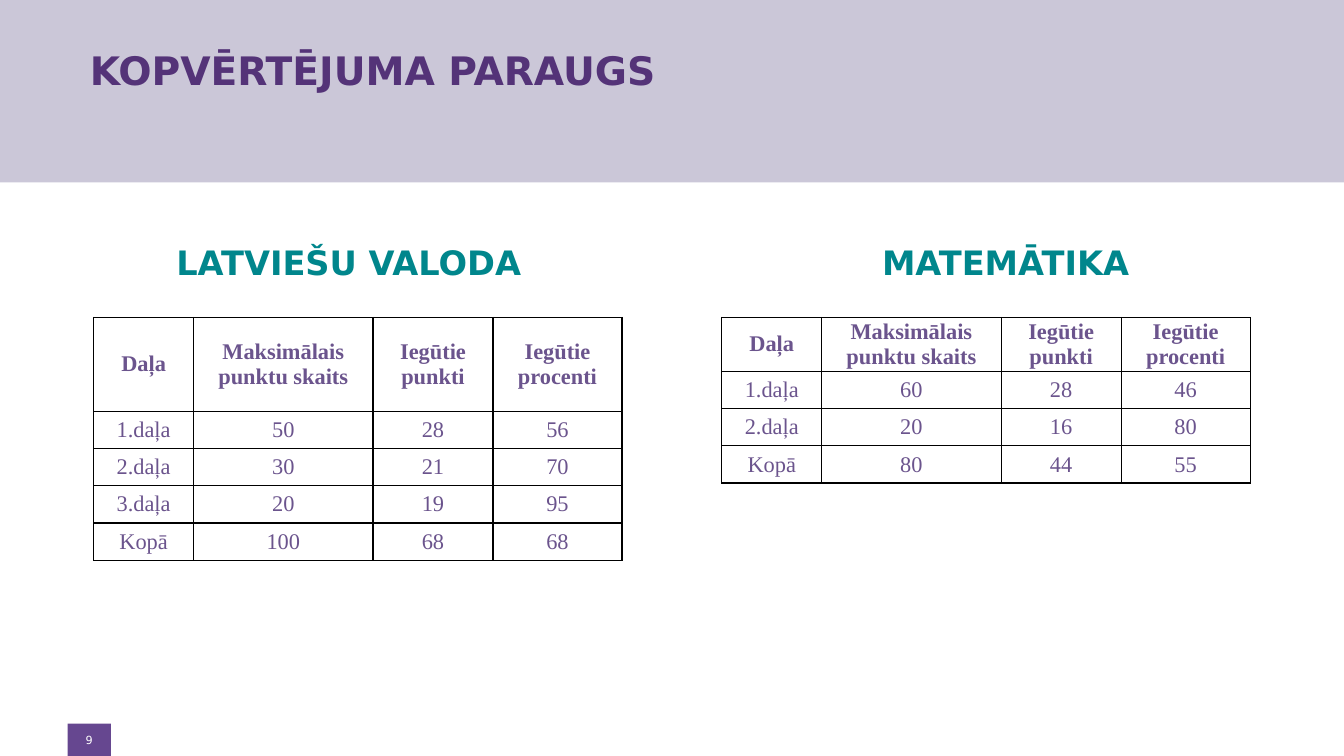
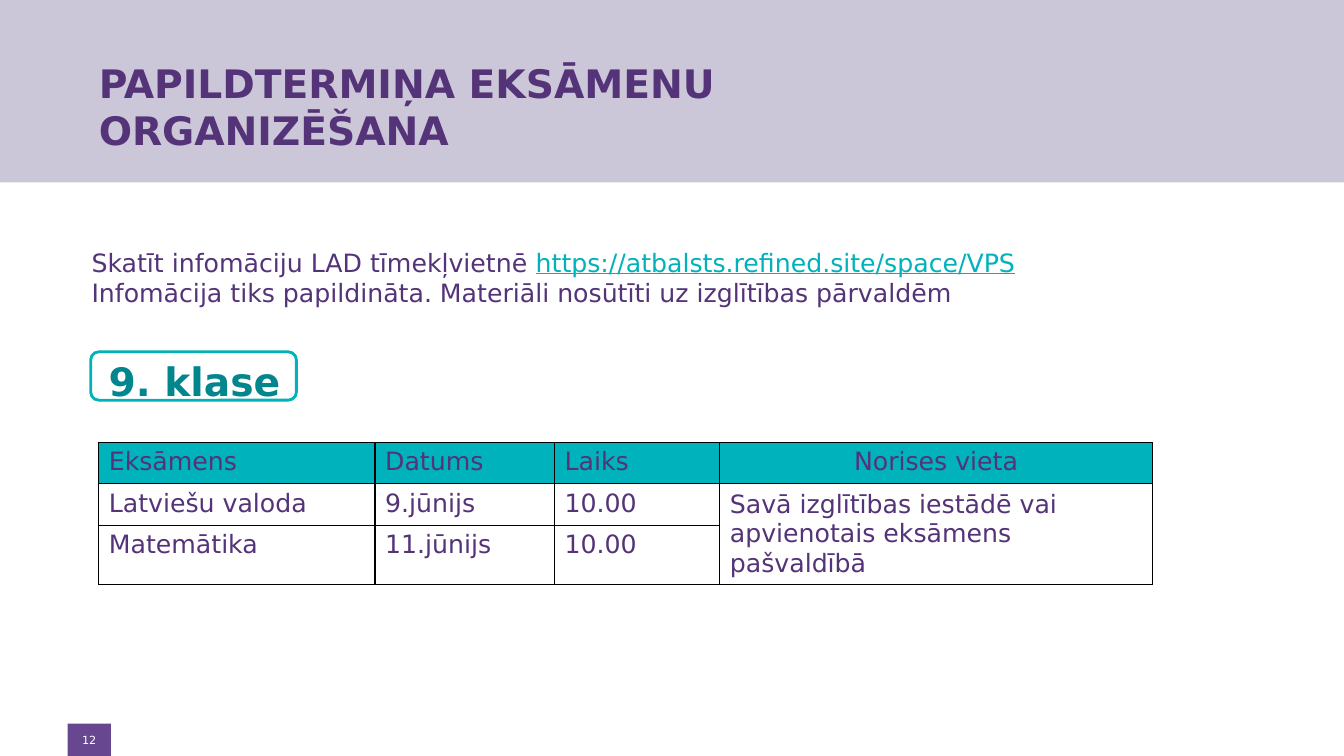
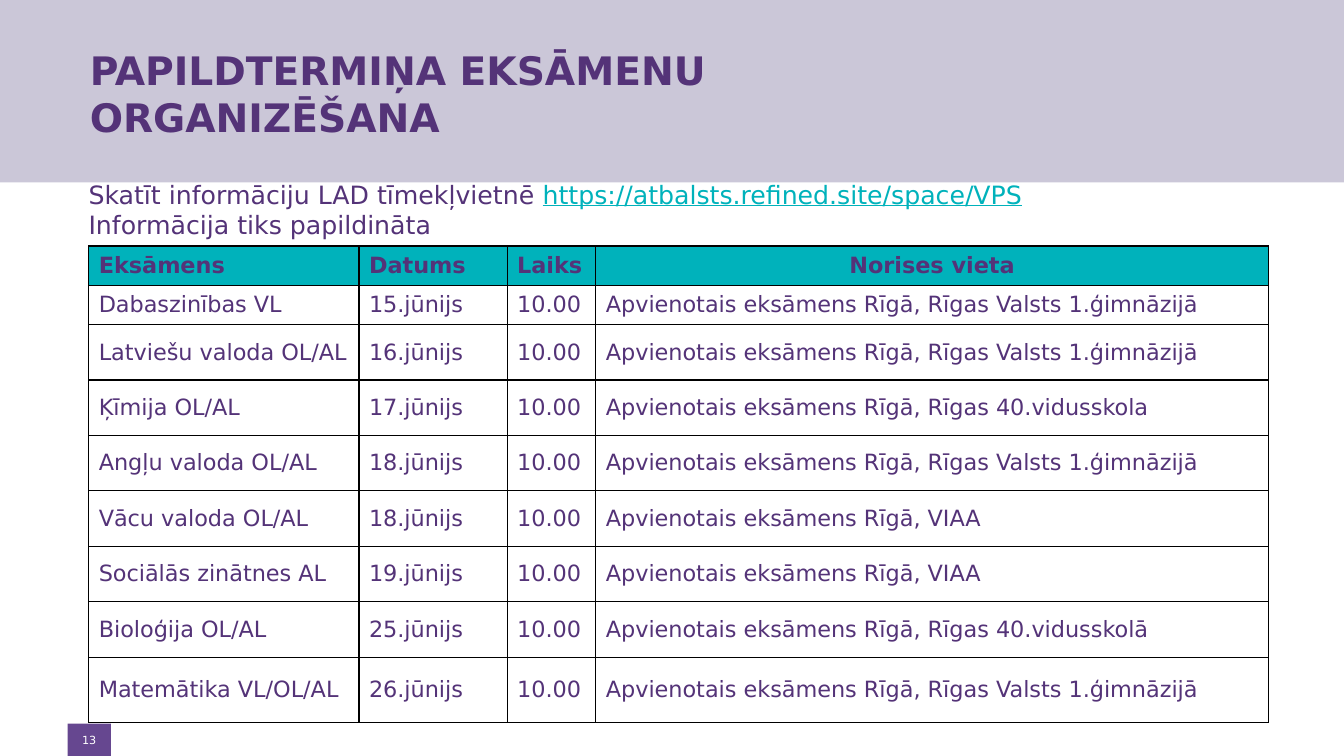
from dataclasses import dataclass
from lxml.etree import SubElement
from pptx import Presentation
from pptx.dml.color import RGBColor
from pptx.enum.shapes import MSO_SHAPE
from pptx.enum.text import MSO_ANCHOR, MSO_AUTO_SIZE, PP_ALIGN
from pptx.oxml.ns import qn
from pptx.util import Inches, Pt


@dataclass(frozen=True)
class Theme:
    font: str = "DejaVu Sans"
    serif: str = "Times New Roman"
    band: str = "CBC7D8"
    badge: str = "664790"
    purple: str = "543378"
    muted: str = "6B548D"
    teal: str = "00868C"
    accent: str = "00B2BB"
    white: str = "FFFFFF"
    black: str = "000000"
    title: int = 28
    heading: int = 24
    body: int = 18
    cell: int = 16
    number: int = 8


T = Theme()
BAND = (0, 0, 13.33, 1.81)
BADGE = (0.67, 7.18, 0.43, 0.32)
LINK = "https://atbalsts.refined.site/space/VPS"

SCORE_HEAD = ["Daļa", "Maksimālais\npunktu skaits", "Iegūtie punkti", "Iegūtie procenti"]
SCORE_COLS = [0.99, 1.78, 1.19, 1.28]
SCORES = [
    dict(heading="LATVIEŠU VALODA", heading_box=(1.65, 2.35, 4.02, 0.5), left=0.93, head_height=0.93,
         rows=[["1.daļa", "50", "28", "56"], ["2.daļa", "30", "21", "70"],
               ["3.daļa", "20", "19", "95"], ["Kopā", "100", "68", "68"]]),
    dict(heading="MATEMĀTIKA", heading_box=(8.65, 2.35, 3.24, 0.5), left=7.16, head_height=0.53,
         rows=[["1.daļa", "60", "28", "46"], ["2.daļa", "20", "16", "80"],
               ["Kopā", "80", "44", "55"]]),
]

EXAM_HEAD = ["Eksāmens", "Datums", "Laiks", "Norises vieta"]
GRADE_9 = [
    ["Latviešu valoda", "9.jūnijs", "10.00", "Savā izglītības iestādē vai apvienotais eksāmens pašvaldībā"],
    ["Matemātika", "11.jūnijs", "10.00", ""],
]
GYMNASIUM = "Rīgas Valsts 1.ģimnāzijā"
EXAMS = [
    ("Dabaszinības VL", 15, GYMNASIUM),
    ("Latviešu valoda OL/AL", 16, GYMNASIUM),
    ("Ķīmija OL/AL", 17, "Rīgas 40.vidusskola"),
    ("Angļu valoda OL/AL", 18, GYMNASIUM),
    ("Vācu valoda OL/AL", 18, "VIAA"),
    ("Sociālās zinātnes AL", 19, "VIAA"),
    ("Bioloģija OL/AL", 25, "Rīgas 40.vidusskolā"),
    ("Matemātika VL/OL/AL", 26, GYMNASIUM),
]


def rgb(color):
    return RGBColor.from_string(color)


def inches(box):
    return [Inches(v) for v in box]


def write(tf, paragraphs, size=T.body, color=T.purple, font=T.font, bold=False,
          align=PP_ALIGN.LEFT, anchor=MSO_ANCHOR.TOP):
    tf.word_wrap = True
    tf.vertical_anchor = anchor
    if isinstance(paragraphs, str):
        paragraphs = [[paragraphs]]
    for i, runs in enumerate(paragraphs):
        p = tf.add_paragraph() if i else tf.paragraphs[0]
        p.alignment = align
        for text in runs:
            for j, line in enumerate(text.split("\n")):
                if j:
                    p.add_line_break()
                r = p.add_run()
                r.text = line
                r.font.name, r.font.size, r.font.bold = font, Pt(size), bold
                r.font.color.rgb = rgb(T.accent if text == LINK else color)
                r.font.underline = text == LINK


def add_text(slide, box, text, **fmt):
    tf = slide.shapes.add_textbox(*inches(box)).text_frame
    write(tf, text, **fmt)
    tf.auto_size = MSO_AUTO_SIZE.SHAPE_TO_FIT_TEXT
    return tf


def add_box(slide, kind, box, fill=None, line=None):
    sp = slide.shapes.add_shape(kind, *inches(box))
    sp.shadow.inherit = False
    if fill:
        sp.fill.solid()
        sp.fill.fore_color.rgb = rgb(fill)
    else:
        sp.fill.background()
    if line:
        sp.line.color.rgb = rgb(line)
        sp.line.width = Pt(2)
    else:
        sp.line.fill.background()
    return sp


def add_borders(cell):
    tcPr = cell._tc.get_or_add_tcPr()
    for side in ("a:lnL", "a:lnR", "a:lnT", "a:lnB"):
        ln = SubElement(tcPr, qn(side), w=str(Pt(1)))
        SubElement(SubElement(ln, qn("a:solidFill")), qn("a:srgbClr"), val=T.black)


def add_grid(slide, left, top, cols, heights, rows, margins=(0.1, 0.05), head_fill=None,
             head_bold=True, centred=False, **fmt):
    box = inches((left, top, sum(cols), sum(heights)))
    table = slide.shapes.add_table(len(rows), len(cols), *box).table
    table.first_row = table.horz_banding = False
    for column, width in zip(table.columns, cols):
        column.width = Inches(width)
    for i, (row, height) in enumerate(zip(rows, heights)):
        table.rows[i].height = Inches(height)
        for j, text in enumerate(row):
            cell = table.cell(i, j)
            add_borders(cell)
            if head_fill and i == 0:
                cell.fill.solid()
                cell.fill.fore_color.rgb = rgb(head_fill)
            else:
                cell.fill.background()
            cell.margin_left = cell.margin_right = Inches(margins[0])
            cell.margin_top = cell.margin_bottom = Inches(margins[1])
            middle = centred or (i == 0 and j == len(cols) - 1)
            options = dict(fmt, bold=head_bold and i == 0,
                           align=PP_ALIGN.CENTER if middle else PP_ALIGN.LEFT)
            anchor = options.pop("anchor", MSO_ANCHOR.TOP)
            write(cell.text_frame, text, **options)
            cell.vertical_anchor = anchor
    return table


def style_layout(prs):
    layout = prs.slide_layouts[5]
    draft = prs.slides.add_slide(layout)
    for i, (box, fill) in enumerate([(BAND, T.band), (BADGE, T.badge)]):
        sp = add_box(draft, MSO_SHAPE.RECTANGLE, box, fill)
        layout.shapes.element.insert(2 + i, sp.element)
    return layout, draft


def add_title(slide, text, number, left=0.89, top=0.29):
    title = slide.shapes.title
    title.left, title.top, title.width, title.height = inches((left, top, 10.67, 1.25))
    tf = title.text_frame
    write(tf, text, size=T.title, bold=True)
    tf.auto_size = MSO_AUTO_SIZE.NONE
    tf.margin_left, tf.margin_top = 0, Inches(0.17)
    tf = slide.shapes.add_textbox(*inches(BADGE)).text_frame
    write(tf, str(number), size=T.number, color=T.white, align=PP_ALIGN.CENTER,
          anchor=MSO_ANCHOR.MIDDLE)
    tf.margin_left = tf.margin_right = tf.margin_top = tf.margin_bottom = Inches(0.04)


def score_slide(slide):
    add_title(slide, "KOPVĒRTĒJUMA PARAUGS", 9)
    for score in SCORES:
        add_text(slide, score["heading_box"], score["heading"],
                 size=T.heading, color=T.teal, bold=True)
        heights = [score["head_height"]] + [0.37] * len(score["rows"])
        add_grid(slide, score["left"], 3.15, SCORE_COLS, heights, [SCORE_HEAD] + score["rows"],
                 margins=(0.07, 0), centred=True, size=T.cell, color=T.muted, font=T.serif,
                 anchor=MSO_ANCHOR.MIDDLE)


def grade_slide(slide):
    add_title(slide, "PAPILDTERMIŅA EKSĀMENU\nORGANIZĒŠANA", 12, left=0.98, top=0.42)
    add_text(slide, (0.81, 2.4, 11.04, 0.71), [
        ["Skatīt infomāciju LAD tīmekļvietnē ", LINK],
        ["Infomācija tiks papildināta. Materiāli nosūtīti uz izglītības pārvaldēm"]])
    add_text(slide, (0.98, 3.5, 2.05, 0.57), "9. klase", size=T.title, color=T.teal, bold=True)
    table = add_grid(slide, 0.98, 4.39, [2.74, 1.78, 1.64, 4.29], [0.41, 0.41, 0.59],
                     [EXAM_HEAD] + GRADE_9, head_fill=T.accent, head_bold=False)
    table.cell(1, 3).merge(table.cell(2, 3))
    table.cell(1, 3).vertical_anchor = MSO_ANCHOR.MIDDLE
    add_box(slide, MSO_SHAPE.ROUNDED_RECTANGLE, (0.9, 3.49, 2.04, 0.48), line=T.accent)


def exam_slide(slide):
    add_title(slide, "PAPILDTERMIŅA EKSĀMENU\nORGANIZĒŠANA", 13)
    add_text(slide, (0.78, 1.73, 12.05, 0.71), [
        ["Skatīt informāciju LAD tīmekļvietnē ", LINK], ["Informācija tiks papildināta"]])
    rows = [[exam, f"{day}.jūnijs", "10.00", f"Apvienotais eksāmens Rīgā, {place}"]
            for exam, day, place in EXAMS]
    heights = [0.39] * 2 + [0.55] * (len(rows) - 2) + [0.65]
    add_grid(slide, 0.88, 2.44, [2.68, 1.47, 0.88, 6.67], heights, [EXAM_HEAD] + rows,
             head_fill=T.accent, size=T.cell, anchor=MSO_ANCHOR.MIDDLE)


def main():
    prs = Presentation()
    prs.slide_width, prs.slide_height = Inches(13.33), Inches(7.5)
    layout, first = style_layout(prs)
    score_slide(first)
    for build in (grade_slide, exam_slide):
        build(prs.slides.add_slide(layout))
    prs.save("out.pptx")


if __name__ == "__main__":
    main()
